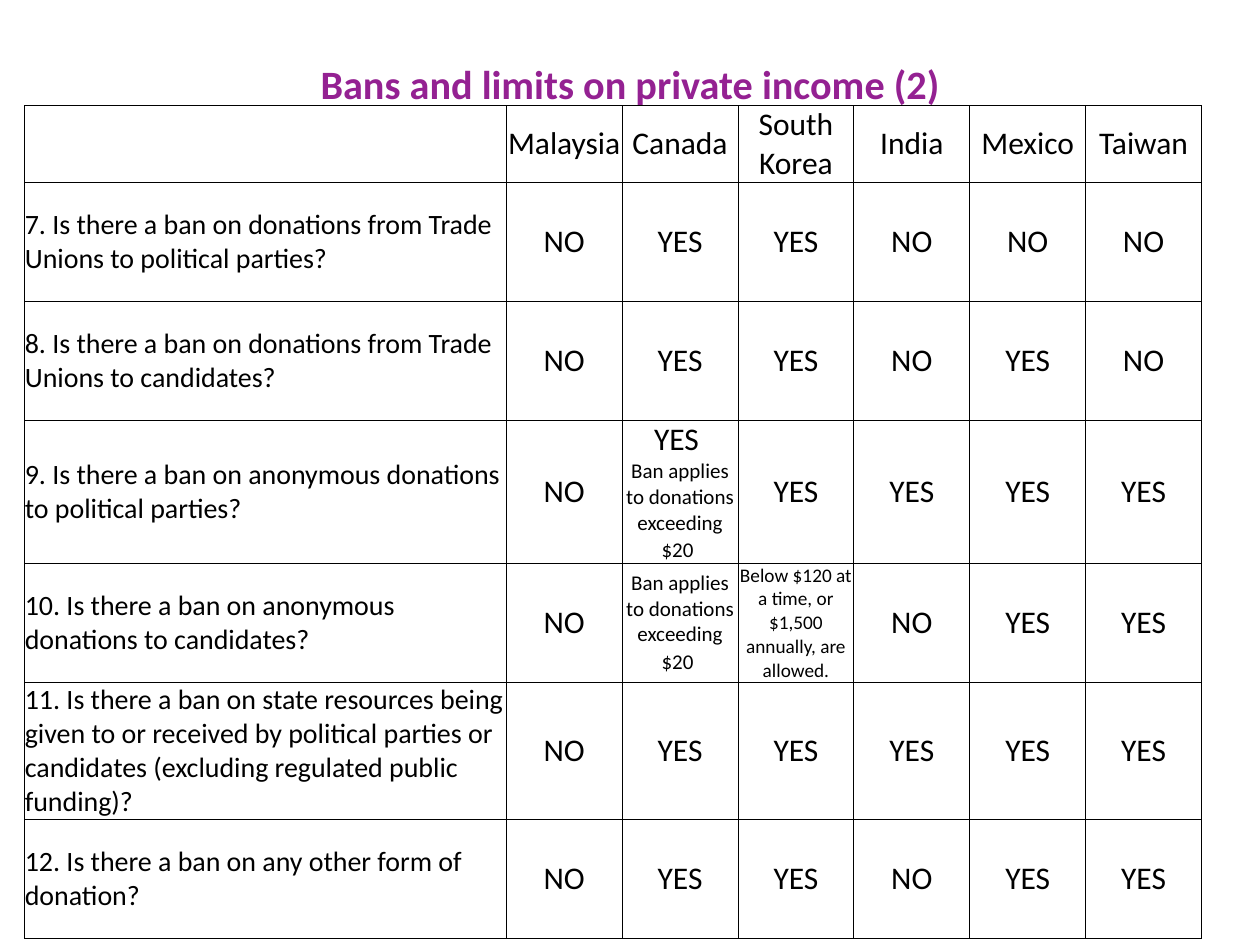
from lxml import etree
from pptx import Presentation
from pptx import util as u
from pptx.dml.color import RGBColor
from pptx.enum import text
from pptx.oxml import ns

FONT = "Calibri"
BLACK, PURPLE = "000000", "942192"
COUNTRIES = ["Malaysia", "Canada", "South Korea", "India", "Mexico", "Taiwan"]
LIMIT = [("Ban applies to donations exceeding $20", 12), (" ", 13)]
Y, N = [[("YES", 18)]], [[("NO", 18)]]
QUESTIONS = [
    ("7. Is there a ban on donations from Trade Unions to political parties?",
     [N, Y, Y, N, N, N]),
    ("8. Is there a ban on donations from Trade Unions to candidates?",
     [N, Y, Y, N, Y, N]),
    ("9. Is there a ban on anonymous donations to political parties?",
     [N, [[("YES ", 18)], LIMIT], Y, Y, Y, Y]),
    ("10. Is there a ban on anonymous donations to candidates?",
     [N, [LIMIT], [[("Below $120 at a time, or $1,500 annually, are allowed.", 11)]],
      N, Y, Y]),
    ("11. Is there a ban on state resources being given to or received by political "
     "parties or candidates (excluding regulated public funding)?",
     [N, Y, Y, Y, Y, Y]),
    ("12. Is there a ban on any other form of donation?",
     [N, Y, Y, N, Y, Y]),
]


def colour(value):
    return RGBColor.from_string(value)


def style_font(font, size, hue=BLACK, bold=False):
    font.name = FONT
    font.size = u.Pt(size)
    font.bold = bold
    font.color.rgb = colour(hue)


def add_title(slide, wording):
    title = slide.shapes.title
    title.left, title.top = u.Pt(49.7), u.Pt(29.5)
    title.width, title.height = u.Pt(621.4), u.Pt(36)
    frame = title.text_frame
    frame.text = wording
    frame.word_wrap = True
    frame.vertical_anchor = text.MSO_ANCHOR.MIDDLE
    paragraph = frame.paragraphs[0]
    paragraph.alignment = text.PP_ALIGN.CENTER
    style_font(paragraph.font, 23, PURPLE, True)


def add_borders(cell):
    properties = cell._tc.get_or_add_tcPr()
    for side in ("lnL", "lnR", "lnT", "lnB"):
        line = etree.SubElement(properties, ns.qn(f"a:{side}"), w=str(u.Pt(0.5)))
        fill = etree.SubElement(line, ns.qn("a:solidFill"))
        etree.SubElement(fill, ns.qn("a:srgbClr"), val=BLACK)


def fill_cell(cell, lines, alignment):
    frame = cell.text_frame
    for index, runs in enumerate(lines):
        paragraph = frame.add_paragraph() if index else frame.paragraphs[0]
        paragraph.alignment = alignment
        style_font(paragraph.font, runs[0][1])
        for wording, size in runs:
            run = paragraph.add_run()
            run.text = wording
            if len(runs) > 1:
                run.font.size = u.Pt(size)


def add_ban_table(slide):
    rows = [[[]] + [[[(country, 18)]] for country in COUNTRIES]]
    rows += [[[[(question, 16)]]] + answers for question, answers in QUESTIONS]
    table = slide.shapes.add_table(
        len(rows), len(rows[0]), u.Pt(14.2), u.Pt(60.4), u.Pt(672.4), u.Pt(434)
    ).table
    table.first_row = table.horz_banding = False
    for index, column in enumerate(table.columns):
        column.width = u.Pt(66.22 if index else 275.1)
    for index, row in enumerate(table.rows):
        row.height = u.Pt(68 if index else 28)
    for row, contents in zip(table.rows, rows):
        for index, (cell, lines) in enumerate(zip(row.cells, contents)):
            cell.margin_left = cell.margin_right = 0
            cell.margin_top = cell.margin_bottom = 0
            cell.vertical_anchor = text.MSO_ANCHOR.MIDDLE
            add_borders(cell)
            cell.fill.background()
            fill_cell(cell, lines,
                      text.PP_ALIGN.CENTER if index else text.PP_ALIGN.LEFT)


def main():
    deck = Presentation()
    deck.slide_width, deck.slide_height = u.Pt(720), u.Pt(540)
    slide = deck.slides.add_slide(deck.slide_layouts[5])
    add_title(slide, "Bans and limits on private income (2)")
    add_ban_table(slide)
    deck.save("out.pptx")


if __name__ == "__main__":
    main()
